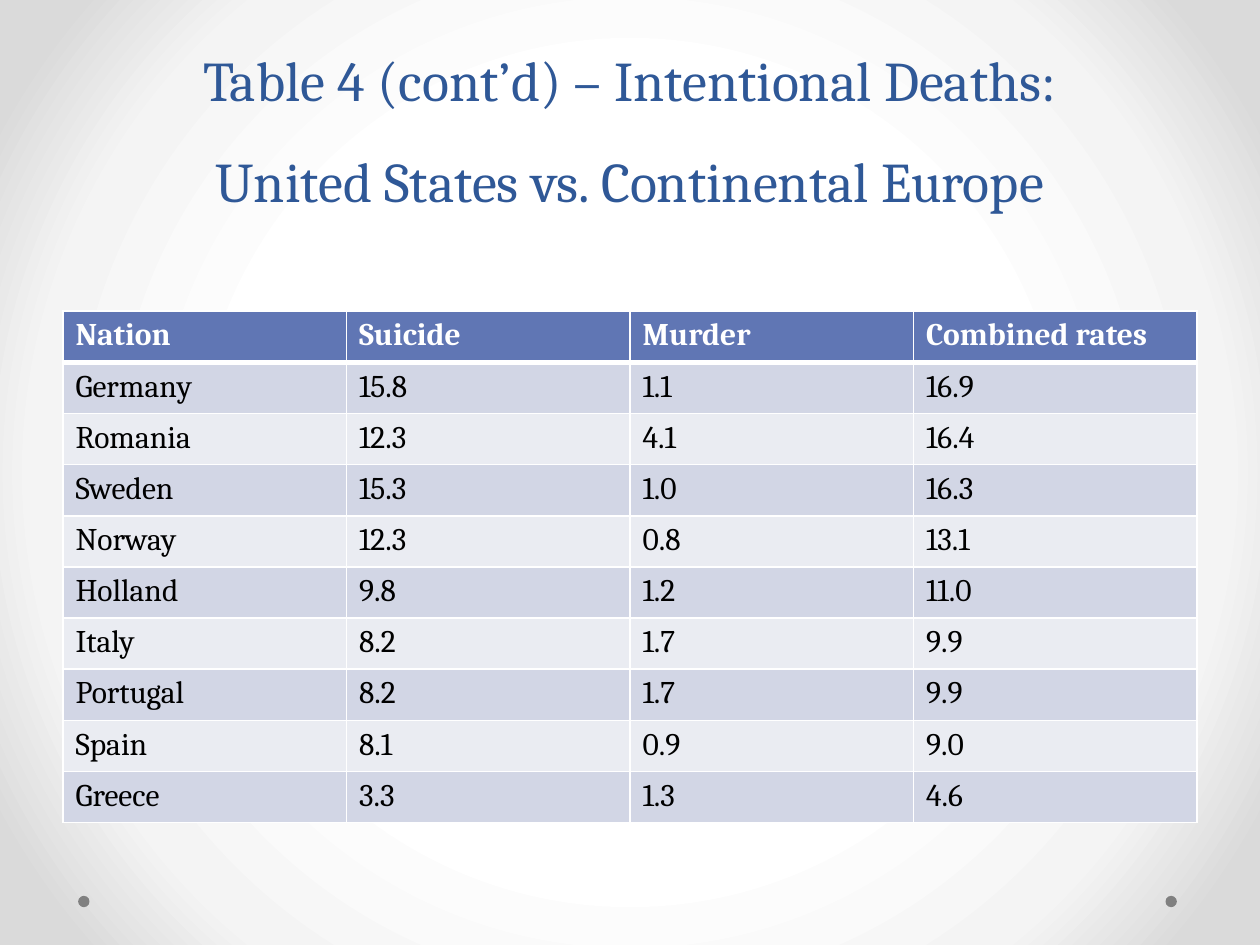
from dataclasses import dataclass

from lxml import etree
from pptx import Presentation
from pptx import util as u
from pptx.dml.color import RGBColor
from pptx.enum import shapes, text
from pptx.oxml import ns


@dataclass(frozen=True)
class Theme:
    font: str = "Cambria"
    title_size: int = 32
    title_spacing: int = 58
    table_size: int = 18
    title: str = "2F5897"
    header: str = "6076B4"
    bands: tuple = ("D2D6E5", "EAECF2")
    white: str = "FFFFFF"
    body: str = "000000"
    dot: str = "808080"
    backdrop: tuple = ((50, "FFFFFF"), (76, "F4F4F4"), (92, "DADADA"))


THEME = Theme()

HEADINGS = ("Nation", "Suicide", "Murder", "Combined rates")
RATES = (
    ("Germany", "15.8", "1.1", "16.9"),
    ("Romania", "12.3", "4.1", "16.4"),
    ("Sweden", "15.3", "1.0", "16.3"),
    ("Norway", "12.3", "0.8", "13.1"),
    ("Holland", "9.8", "1.2", "11.0"),
    ("Italy", "8.2", "1.7", "9.9"),
    ("Portugal", "8.2", "1.7", "9.9"),
    ("Spain", "8.1", "0.9", "9.0"),
    ("Greece", "3.3", "1.3", "4.6"),
)


def sub(parent, tag, **attrs):
    return etree.SubElement(parent, ns.qn(tag), attrs)


def write(tf, content, size, color, bold=False, align=None, spacing=None):
    """Fill a text frame; a newline becomes a line break."""
    p = tf.paragraphs[0]
    if align is not None:
        p.alignment = align
    if spacing:
        p.line_spacing = u.Pt(spacing)
    for i, line in enumerate(content.split("\n")):
        if i:
            p.add_line_break()
        r = p.add_run()
        r.text = line
        r.font.name = THEME.font
        r.font.size = u.Pt(size)
        r.font.bold = bold
        r.font.color.rgb = RGBColor.from_string(color)


def paint_background(slide):
    # Radial gradient from the centre outwards
    fill = slide.background.fill
    fill.solid()
    fill.fore_color.rgb = RGBColor.from_string(THEME.white)
    solid = slide.element.find(".//" + ns.qn("p:bgPr")).find(ns.qn("a:solidFill"))
    grad = etree.Element(ns.qn("a:gradFill"), rotWithShape="1")
    stops = sub(grad, "a:gsLst")
    for position, color in THEME.backdrop:
        stop = sub(stops, "a:gs", pos=str(position * 1000))
        sub(stop, "a:srgbClr", val=color)
    radial = sub(grad, "a:path", path="circle")
    sub(radial, "a:fillToRect", l="50000", t="50000", r="50000", b="50000")
    solid.getparent().replace(solid, grad)


def add_dots(slide, lefts, top, size):
    for left in lefts:
        sp = slide.shapes.add_shape(shapes.MSO_SHAPE.OVAL, left, top, size, size)
        sp.shadow.inherit = False
        sp.fill.solid()
        sp.fill.fore_color.rgb = RGBColor.from_string(THEME.dot)
        sp.line.fill.background()


def place_title(slide, content, left, top, width, height):
    sp = slide.shapes.title
    sp.left, sp.top, sp.width, sp.height = left, top, width, height
    tf = sp.text_frame
    tf.word_wrap = True
    tf.auto_size = text.MSO_AUTO_SIZE.NONE
    tf.vertical_anchor = text.MSO_ANCHOR.BOTTOM
    write(tf, content, THEME.title_size, THEME.title,
          align=text.PP_ALIGN.CENTER, spacing=THEME.title_spacing)


def set_borders(cell, top=1, bottom=1):
    tc_pr = cell._tc.get_or_add_tcPr()
    for side, width in (("L", 1), ("R", 1), ("T", top), ("B", bottom)):
        ln = sub(tc_pr, f"a:ln{side}", w=str(u.Pt(width)))
        sub(sub(ln, "a:solidFill"), "a:srgbClr", val=THEME.white)


def add_rates_table(slide, left, top, width, height):
    rows = (HEADINGS, *RATES)
    table = slide.shapes.add_table(
        len(rows), len(HEADINGS), left, top, width, height).table
    for row in table.rows:
        row.height = height // len(rows)
    for i, values in enumerate(rows):
        is_header = i == 0
        fill = THEME.header if is_header else THEME.bands[(i - 1) % 2]
        for j, value in enumerate(values):
            cell = table.cell(i, j)
            # A heavier rule separates the header from the body
            set_borders(cell, top=3 if i == 1 else 1, bottom=3 if is_header else 1)
            cell.fill.solid()
            cell.fill.fore_color.rgb = RGBColor.from_string(fill)
            write(cell.text_frame, value, THEME.table_size,
                  THEME.white if is_header else THEME.body, bold=is_header)


def main():
    prs = Presentation()
    prs.slide_width, prs.slide_height = u.Inches(10), u.Inches(7.5)
    slide = prs.slides.add_slide(prs.slide_layouts[5])
    margin, width = u.Inches(0.5), u.Inches(9)

    paint_background(slide)
    add_dots(slide, (u.Inches(0.62), u.Inches(9.25)), u.Inches(7.11), u.Inches(0.09))
    place_title(
        slide,
        "Table 4 (cont’d) – Intentional Deaths:\nUnited States vs. Continental Europe",
        margin, u.Inches(0), width, u.Inches(1.75))
    add_rates_table(slide, margin, u.Inches(2.47), width, u.Inches(4.06))
    prs.save("out.pptx")


if __name__ == "__main__":
    main()
